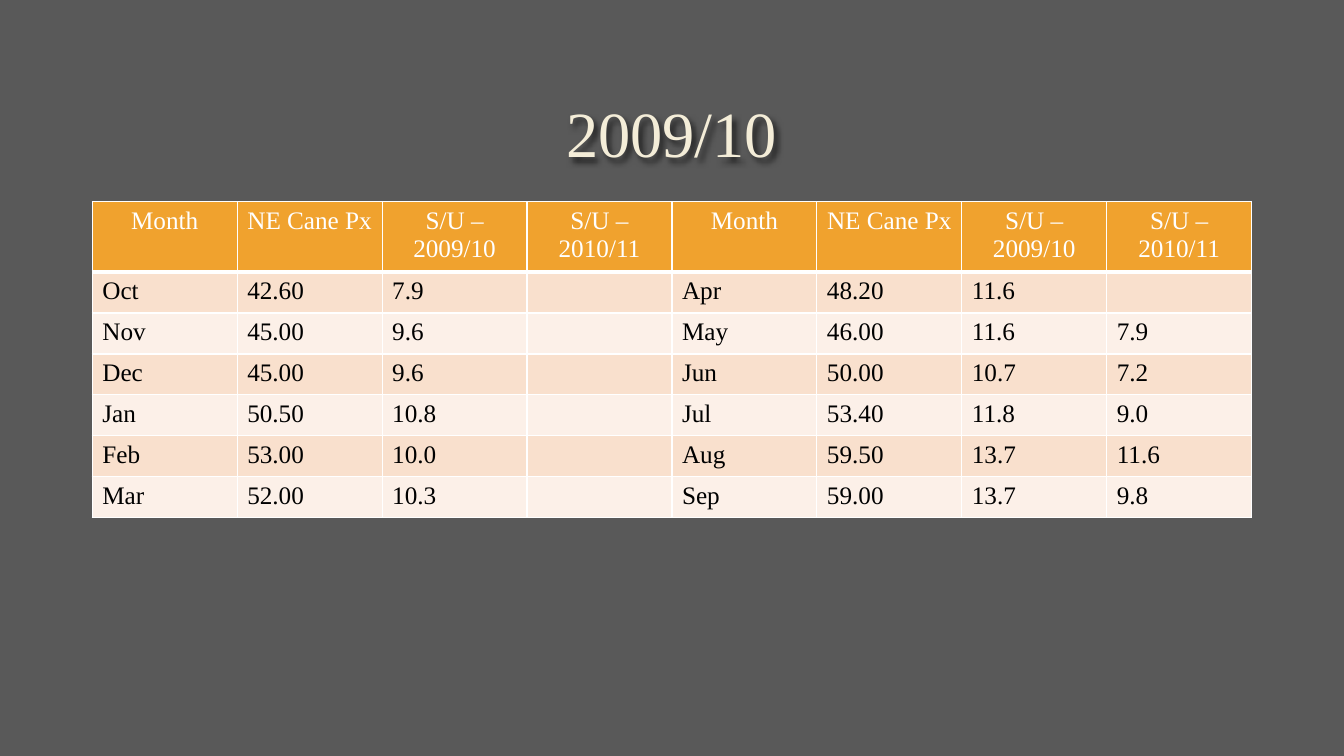
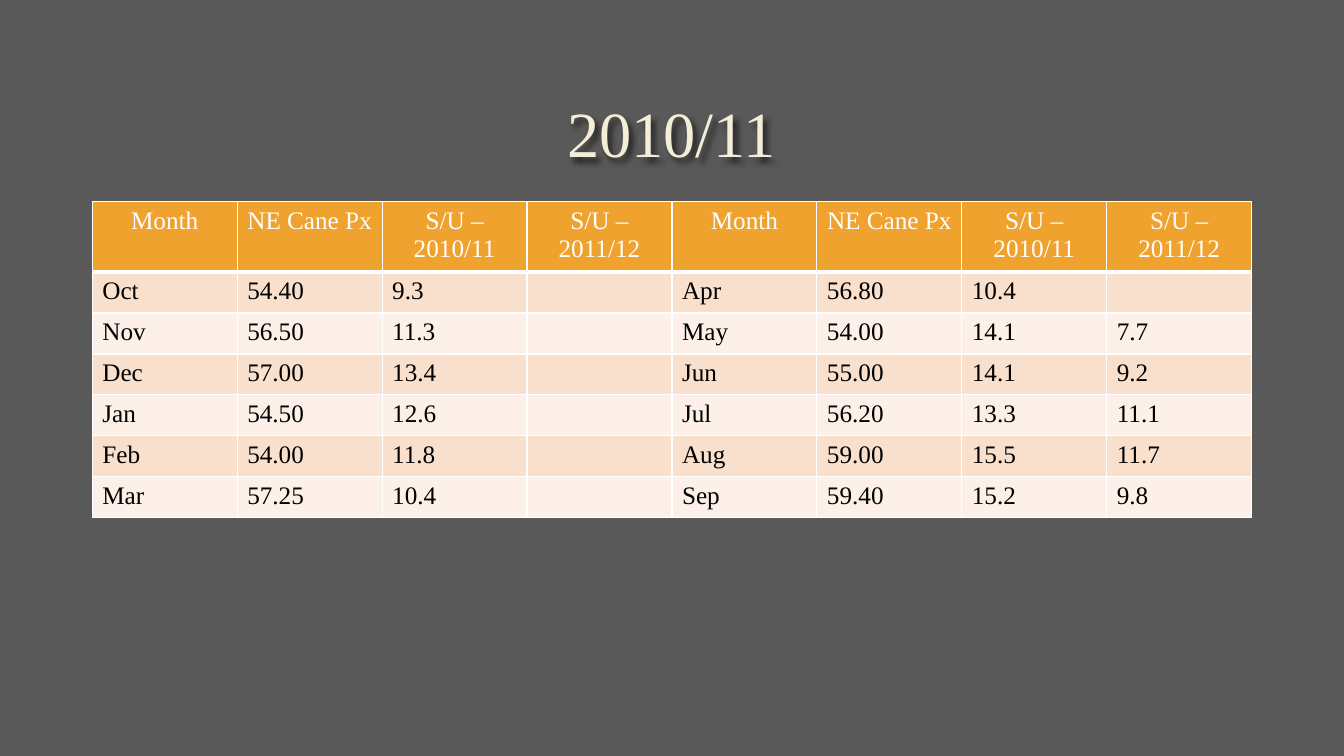
from lxml import etree
from pptx import Presentation
from pptx import util as u
from pptx.dml.color import RGBColor
from pptx.enum import text
from pptx.oxml import parse_xml
from pptx.oxml.ns import nsdecls

GREY = RGBColor(0x59, 0x59, 0x59)
CREAM = RGBColor(0xF4, 0xED, 0xD8)
ORANGE = RGBColor(0xF0, 0xA2, 0x2E)
PEACH = RGBColor(0xF9, 0xE0, 0xCD)
PALE = RGBColor(0xFC, 0xF0, 0xE8)
WHITE = RGBColor(0xFF, 0xFF, 0xFF)
BLACK = RGBColor(0x00, 0x00, 0x00)

TITLE = {"name": "Times New Roman", "size": u.Pt(46), "bold": False}
CELL = {"name": "Times New Roman", "size": u.Pt(18), "bold": False}
SHADOW = (
    f'<a:effectLst {nsdecls("a")}>'
    '<a:outerShdw blurRad="50800" dist="38100" dir="2700000" algn="tl">'
    '<a:srgbClr val="000000"><a:alpha val="60000"/></a:srgbClr>'
    '</a:outerShdw></a:effectLst>'
)
OUTLINE = (
    f'<a:ln {nsdecls("a")} w="9525"><a:solidFill><a:srgbClr val="404040">'
    '<a:alpha val="10000"/></a:srgbClr></a:solidFill></a:ln>'
)

MONTHS = ["Oct", "Nov", "Dec", "Jan", "Feb", "Mar",
          "Apr", "May", "Jun", "Jul", "Aug", "Sep"]
YEARS = [
    ("2009/10", "2010/11",
     ["42.60", "45.00", "45.00", "50.50", "53.00", "52.00",
      "48.20", "46.00", "50.00", "53.40", "59.50", "59.00"],
     ["7.9", "9.6", "9.6", "10.8", "10.0", "10.3",
      "11.6", "11.6", "10.7", "11.8", "13.7", "13.7"],
     ["7.9", "7.2", "9.0", "11.6", "9.8"]),
    ("2010/11", "2011/12",
     ["54.40", "56.50", "57.00", "54.50", "54.00", "57.25",
      "56.80", "54.00", "55.00", "56.20", "59.00", "59.40"],
     ["9.3", "11.3", "13.4", "12.6", "11.8", "10.4",
      "10.4", "14.1", "14.1", "13.3", "15.5", "15.2"],
     ["7.7", "9.2", "11.1", "11.7", "9.8"]),
]


def add_run(p, words, style, color):
    r = p.add_run()
    r.text = words
    for key, value in style.items():
        setattr(r.font, key, value)
    r.font.color.rgb = color
    return r


def add_borders(cell, bottom):
    tcPr = cell._tc.get_or_add_tcPr()
    for side, width in (("L", 1), ("R", 1), ("T", 1), ("B", bottom)):
        ln = parse_xml(
            f'<a:ln{side} {nsdecls("a")} w="{u.Pt(width)}"><a:solidFill>'
            f'<a:srgbClr val="{WHITE}"/></a:solidFill></a:ln{side}>')
        tcPr.append(ln)


prs = Presentation()
prs.slide_width, prs.slide_height = u.Inches(13.33), u.Inches(7.5)
W, H = prs.slide_width, prs.slide_height
ROW = u.Pt(29.2)
TABLE_W = u.Inches(11.5)

for season, following, prices, current, later in YEARS:
    s = prs.slides.add_slide(prs.slide_layouts[6])
    s.background.fill.solid()
    s.background.fill.fore_color.rgb = GREY

    sp = s.shapes.add_textbox(u.Inches(1), u.Inches(0.67), u.Inches(11.32), u.Inches(1.38))
    sp._element.spPr.append(parse_xml(SHADOW))
    tf = sp.text_frame
    tf.word_wrap = True
    tf.vertical_anchor = text.MSO_ANCHOR.MIDDLE
    p = tf.paragraphs[0]
    p.alignment = text.PP_ALIGN.CENTER
    p.line_spacing = 0.9
    r = add_run(p, season, TITLE, CREAM)
    r.font._element.insert(0, parse_xml(OUTLINE))

    next_season = [""] * (len(MONTHS) - len(later)) + later
    records = list(zip(MONTHS, prices, current, next_season))
    half = len(records) // 2
    header = ["Month", "NE Cane Px", f"S/U – {season}", f"S/U – {following}"]
    rows = [header * 2] + [a + b for a, b in zip(records[:half], records[half:])]

    table = s.shapes.add_table(len(rows), len(rows[0]), (W - TABLE_W) // 2, u.Inches(2),
                               TABLE_W, ROW * len(rows)).table
    for i, row in enumerate(rows):
        table.rows[i].height = ROW
        fill = ORANGE if i == 0 else (PALE, PEACH)[i % 2]
        for j, words in enumerate(row):
            cell = table.cell(i, j)
            add_borders(cell, 1 if i else 3)
            cell.fill.solid()
            cell.fill.fore_color.rgb = fill
            p = cell.text_frame.paragraphs[0]
            p.alignment = text.PP_ALIGN.LEFT if i else text.PP_ALIGN.CENTER
            if words:
                add_run(p, words, CELL, BLACK if i else WHITE)

prs.save("out.pptx")
